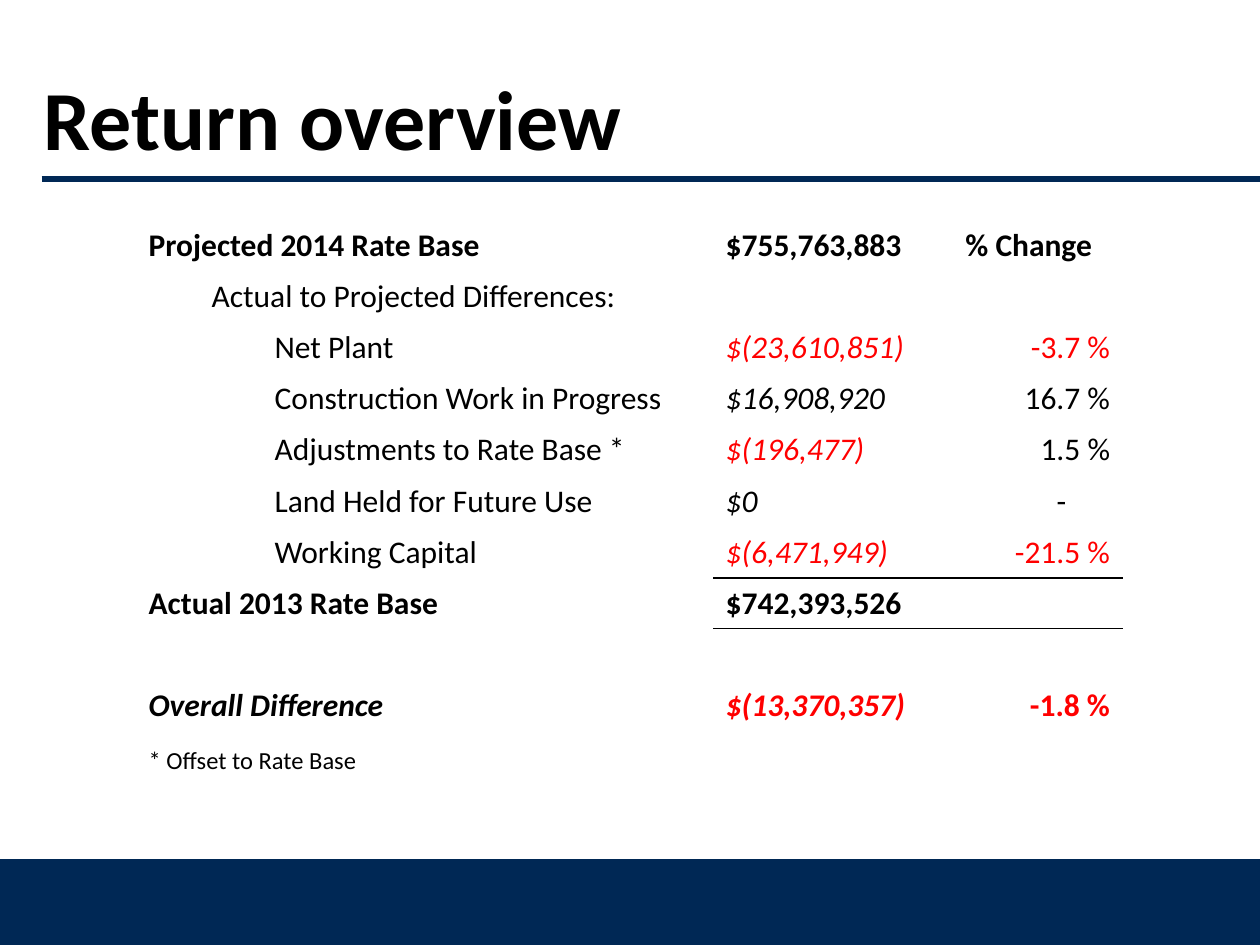
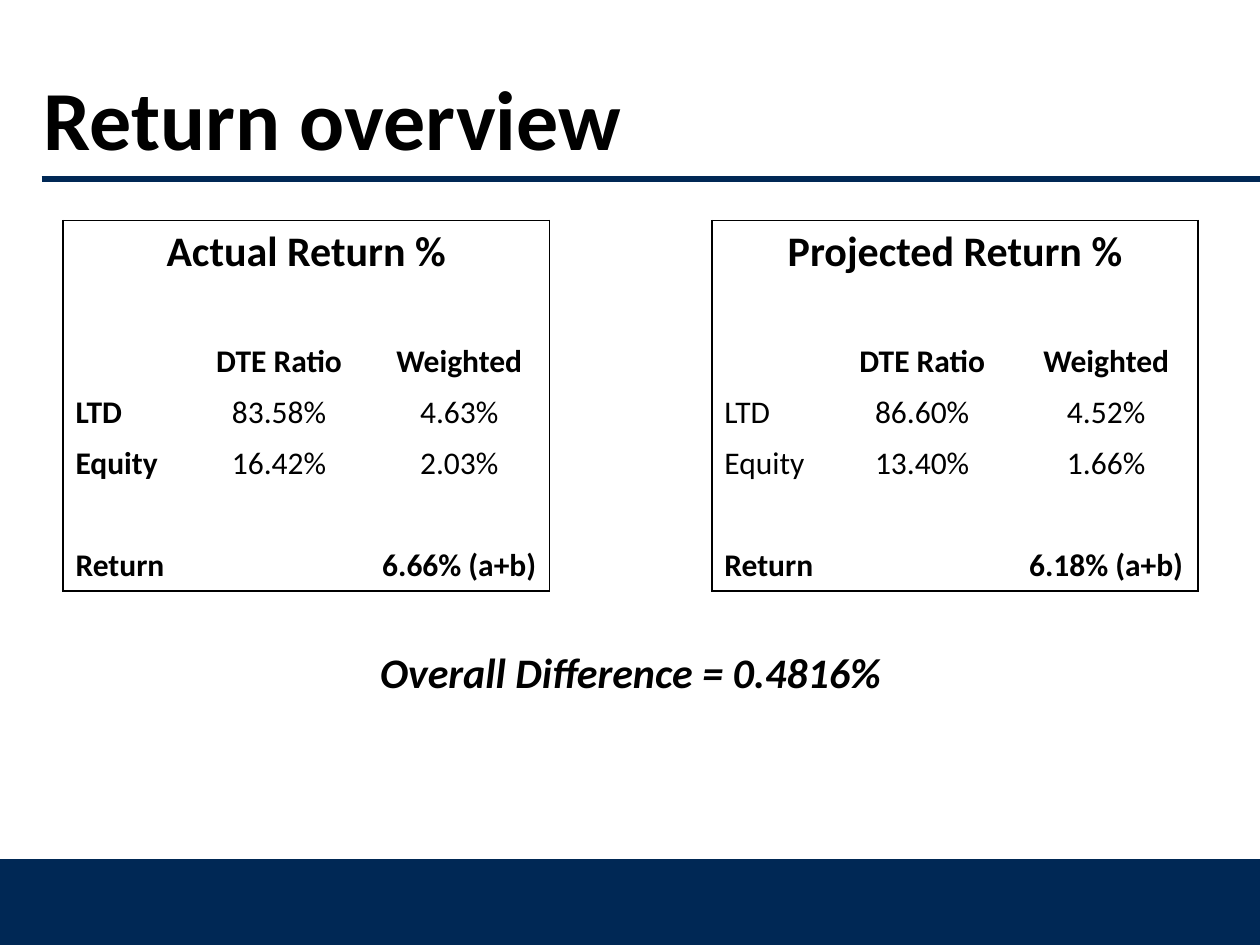
from dataclasses import dataclass

from lxml.etree import SubElement
from pptx import Presentation
from pptx.dml.color import RGBColor
from pptx.enum.shapes import MSO_CONNECTOR, MSO_SHAPE
from pptx.enum.text import MSO_ANCHOR, PP_ALIGN
from pptx.oxml.ns import qn
from pptx.util import Inches, Pt


@dataclass(frozen=True)
class Theme:
    font: str = "Calibri"
    navy: RGBColor = RGBColor(0x00, 0x28, 0x55)
    black: RGBColor = RGBColor(0x00, 0x00, 0x00)
    red: RGBColor = RGBColor(0xFF, 0x00, 0x00)
    title_size: int = 48
    heading_size: int = 24
    body_size: int = 18
    note_size: int = 14
    row_height: int = Inches(4.46) // 11
    heading_height: int = Inches(0.51)


THEME = Theme()


def write(frame, text, size=THEME.body_size, color=THEME.black, bold=False,
          italic=False, align=PP_ALIGN.LEFT, indent=0):
    paragraph = frame.paragraphs[0]
    paragraph.alignment = align
    if indent:
        properties = paragraph._p.get_or_add_pPr()
        properties.set("marL", str(Inches(indent)))
        properties.set("indent", "0")
    run = paragraph.add_run()
    run.text = text
    run.font.name = THEME.font
    run.font.size = Pt(size)
    run.font.color.rgb = color
    run.font.bold = bold
    run.font.italic = italic


def add_base_slide(presentation, title):
    slide = presentation.slides.add_slide(presentation.slide_layouts[6])
    band = slide.shapes.add_shape(
        MSO_SHAPE.RECTANGLE, 0, Inches(6.83), Inches(10), Inches(0.67))
    band.shadow.inherit = False
    band.fill.solid()
    band.fill.fore_color.rgb = THEME.navy
    band.line.color.rgb = THEME.navy
    band.line.width = Pt(2)

    rule = slide.shapes.add_connector(
        MSO_CONNECTOR.STRAIGHT, Inches(0.33), Inches(1.42), Inches(10), Inches(1.42))
    rule.line.color.rgb = THEME.navy
    rule.line.width = Pt(3)
    SubElement(rule._element.spPr, qn("a:effectLst"))

    title_box = slide.shapes.add_textbox(
        Inches(0.25), Inches(0.3), Inches(8.67), Inches(1.25))
    title_box.text_frame.word_wrap = True
    title_box.text_frame.vertical_anchor = MSO_ANCHOR.MIDDLE
    write(title_box.text_frame, title, size=THEME.title_size, bold=True)
    return slide


def add_plain_table(slide, left, top, column_widths, row_heights):
    table = slide.shapes.add_table(
        len(row_heights), len(column_widths), Inches(left), Inches(top),
        Inches(sum(column_widths)), sum(row_heights)).table
    table.first_row = False
    table.horz_banding = False
    for column, width in zip(table.columns, column_widths):
        column.width = Inches(width)
    for row, height in zip(table.rows, row_heights):
        row.height = height
    return table


def horizontal_edges(boundary, columns, width=1):
    return {("horizontal", boundary, column): width for column in columns}


def vertical_edges(boundary, rows, width=1):
    return {("vertical", row, boundary): width for row in rows}


def draw_borders(table, edges):
    for row in range(len(table.rows)):
        for column in range(len(table.columns)):
            cell = table.cell(row, column)
            sides = {
                "a:lnL": ("vertical", row, column),
                "a:lnR": ("vertical", row, column + cell.span_width),
                "a:lnT": ("horizontal", row, column),
                "a:lnB": ("horizontal", row + 1, column),
            }
            properties = cell._tc.get_or_add_tcPr()
            for tag, edge in sides.items():
                border = SubElement(properties, qn(tag))
                if edge in edges:
                    border.set("w", str(Pt(edges[edge])))
                    fill = SubElement(border, qn("a:solidFill"))
                    SubElement(fill, qn("a:srgbClr")).set("val", str(THEME.black))
                else:
                    SubElement(border, qn("a:noFill"))
            cell.fill.background()


def add_rate_base_table(slide, left, top):
    table = add_plain_table(slide, left, top, [4.58, 1.76, 1.49], [THEME.row_height] * 11)

    def put(row, column, text, **style):
        write(table.cell(row, column).text_frame, text, **style)

    put(0, 0, "Projected 2014 Rate Base", bold=True)
    put(0, 1, "$755,763,883", bold=True)
    put(0, 2, "% Change", bold=True, align=PP_ALIGN.CENTER)
    put(1, 0, "Actual to Projected Differences:", indent=0.5)

    differences = [
        ("Net Plant", "$(23,610,851)", "-3.7 %"),
        ("Construction Work in Progress", "$16,908,920", "16.7 %"),
        ("Adjustments to Rate Base *", "$(196,477)", "1.5 %"),
        ("Land Held for Future Use", "$0", "-"),
        ("Working Capital", "$(6,471,949)", "-21.5 %"),
    ]
    for row, (label, amount, change) in enumerate(differences, start=2):
        put(row, 0, label, indent=1)
        put(row, 1, amount, italic=True, color=THEME.red if "(" in amount else THEME.black)
        if change == "-":
            put(row, 2, change, align=PP_ALIGN.CENTER, indent=0.52)
        else:
            put(row, 2, change, align=PP_ALIGN.RIGHT,
                color=THEME.red if change.startswith("-") else THEME.black)

    put(7, 0, "Actual 2013 Rate Base", bold=True)
    put(7, 1, "$742,393,526", bold=True)
    put(9, 0, "Overall Difference", bold=True, italic=True)
    put(9, 1, "$(13,370,357)", bold=True, italic=True, color=THEME.red)
    put(9, 2, "-1.8 %", bold=True, color=THEME.red, align=PP_ALIGN.RIGHT)
    put(10, 0, "* Offset to Rate Base", size=THEME.note_size)
    table.cell(10, 0).vertical_anchor = MSO_ANCHOR.BOTTOM

    draw_borders(table, horizontal_edges(7, (1, 2)) | horizontal_edges(8, (1, 2), 0.5))


def fill_return_panel(table, first_column, title, ratios, total, bold_labels):
    def put(row, offset, text, **style):
        align = PP_ALIGN.CENTER if offset or row == 0 else PP_ALIGN.LEFT
        write(table.cell(row, first_column + offset).text_frame, text, align=align, **style)

    table.cell(0, first_column).merge(table.cell(0, first_column + 2))
    put(0, 0, title, size=THEME.heading_size, bold=True)
    put(2, 1, "DTE Ratio", bold=True)
    put(2, 2, "Weighted", bold=True)
    for row, (label, ratio, weighted) in enumerate(ratios, start=3):
        put(row, 0, label, bold=bold_labels)
        put(row, 1, ratio)
        put(row, 2, weighted)
    put(6, 0, "Return", bold=True)
    put(6, 2, total, bold=True)

    columns = range(first_column, first_column + 3)
    return (horizontal_edges(0, columns) | horizontal_edges(7, columns)
            | vertical_edges(first_column, range(7))
            | vertical_edges(first_column + 3, range(7)))


def add_return_table(slide, left, top):
    row_heights = [THEME.heading_height, *[THEME.row_height] * 7, THEME.heading_height]
    table = add_plain_table(
        slide, left, top, [1, 1.43, 1.43, 1.29, 0.94, 1.46, 1.46], row_heights)
    actual_edges = fill_return_panel(
        table, 0, "Actual Return %",
        [("LTD", "83.58%", "4.63%"), ("Equity", "16.42%", "2.03%")],
        "6.66% (a+b)", bold_labels=True)
    projected_edges = fill_return_panel(
        table, 4, "Projected Return %",
        [("LTD", "86.60%", "4.52%"), ("Equity", "13.40%", "1.66%")],
        "6.18% (a+b)", bold_labels=False)
    table.cell(8, 0).merge(table.cell(8, 6))
    write(table.cell(8, 0).text_frame, "Overall Difference = 0.4816%",
          size=THEME.heading_size, bold=True, italic=True, align=PP_ALIGN.CENTER)
    draw_borders(table, actual_edges | projected_edges)


def main():
    presentation = Presentation()
    presentation.slide_width = Inches(10)
    presentation.slide_height = Inches(7.5)
    add_rate_base_table(add_base_slide(presentation, "Return overview"), 1.08, 1.75)
    add_return_table(add_base_slide(presentation, "Return overview"), 0.5, 1.75)
    presentation.save("out.pptx")


if __name__ == "__main__":
    main()
